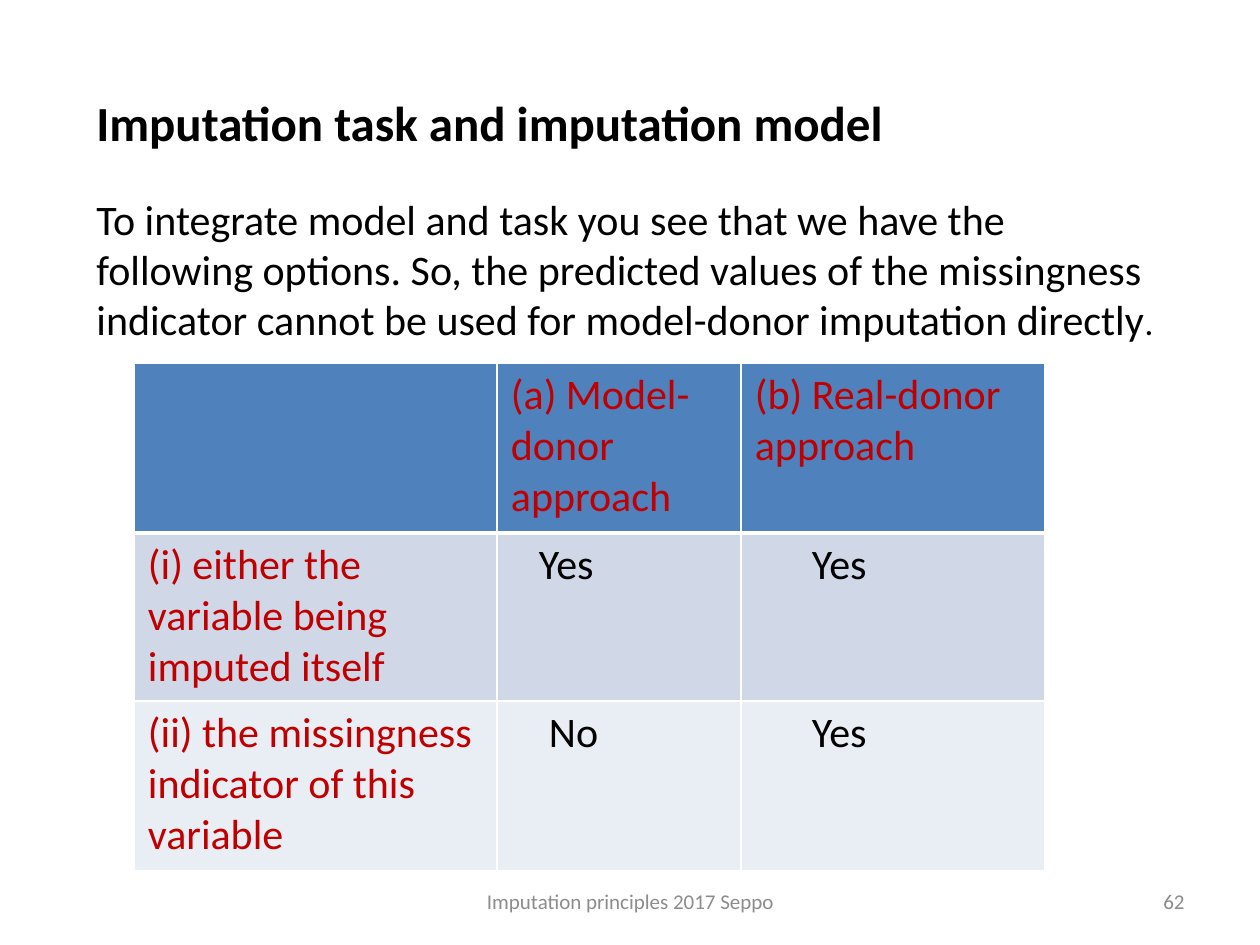
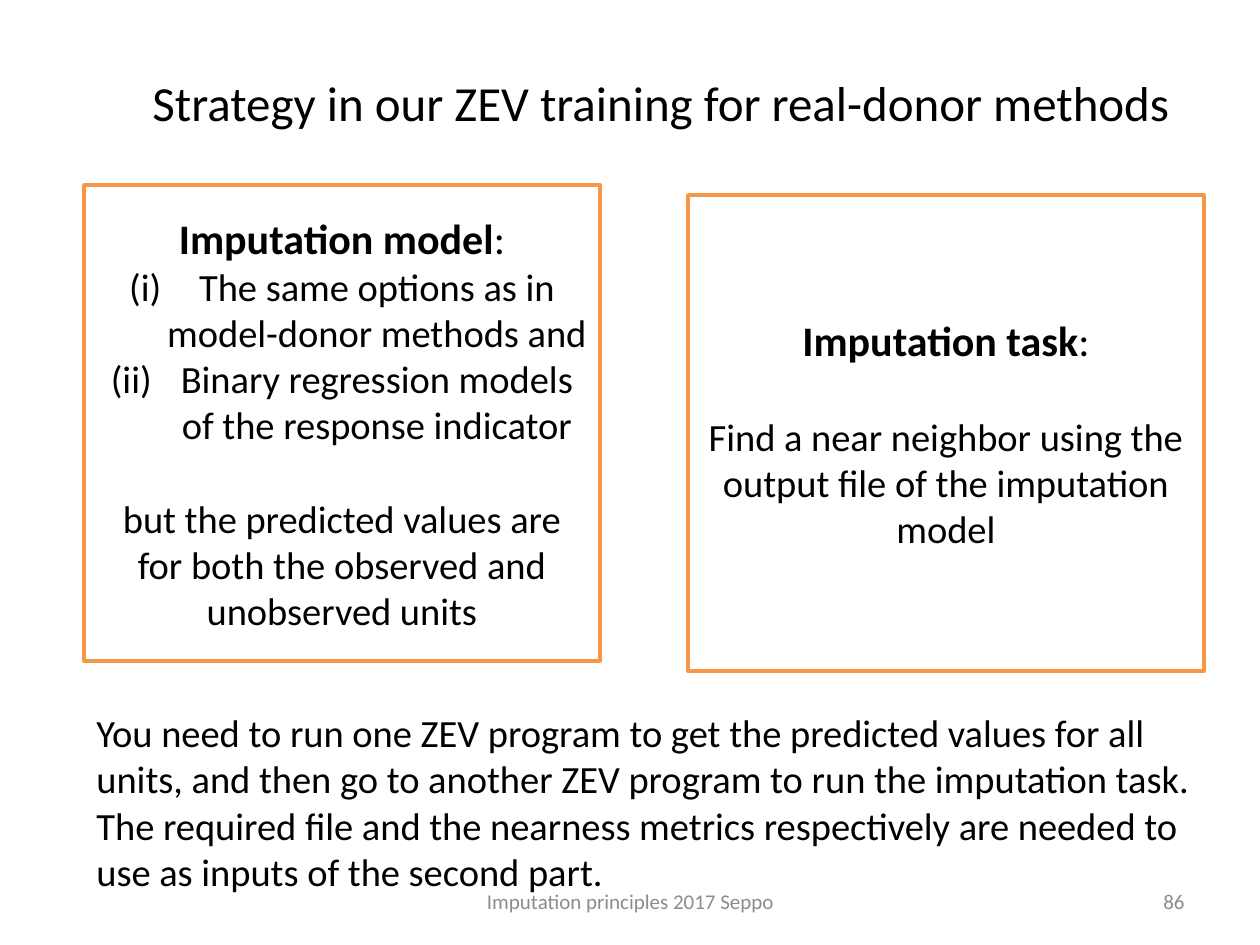
from dataclasses import dataclass
from pptx import Presentation
from pptx.dml.color import RGBColor as Rgb
from pptx.enum.shapes import MSO_SHAPE as Shape
from pptx.enum.text import MSO_ANCHOR as Anchor, PP_ALIGN as Align
from pptx.oxml import parse_xml
from pptx.oxml.ns import nsdecls
from pptx.util import Emu, Pt


@dataclass(frozen=True)
class Theme:
    font: str = "Calibri"
    ink: str = "000000"
    paper: str = "FFFFFF"
    red: str = "C00000"
    grey: str = "8C8C8C"
    frame: str = "F79646"
    bands: tuple = ("4F81BD", "D0D8E8", "E9EDF4")
    title: int = 28
    lead: int = 24
    body: int = 22
    small: int = 20
    foot: int = 12


T = Theme()
SCALE = 914400 / 126
FOOTER = "Imputation principles 2017 Seppo"
INTRO = [
    dict(runs=[("Imputation task and imputation model", T.title, True)], after=24),
    dict(runs=[("To integrate model and task you see that we have the following "
                "options. So, the predicted values of the missingness indicator "
                "cannot be used for model-donor imputation directly", T.lead, False),
               (".", T.small, False)]),
]
GRID = [
    ["", "(a) Model-donor approach", "(b) Real-donor approach"],
    ["(i) either the variable being imputed itself", "Yes", "Yes"],
    ["(ii) the missingness indicator of this variable", "No", "Yes"],
]
COLS = [363, 244, 304]
ROWS = [170, 168, 170]
SHIFT = {(1, 1): 28, (1, 2): 57, (2, 1): 38, (2, 2): 57}
HEAD = [dict(runs=[("Strategy in our ZEV training for real-donor methods", T.title, False)])]
MODEL = [
    dict(runs=[("Imputation model", T.lead, True), (":", T.lead, False)]),
    dict(runs=[("The same options as in model-donor methods and", T.body, False)],
         roman=True),
    dict(runs=[("Binary regression models of the response indicator", T.body, False)],
         roman=True),
    dict(runs=[("but the predicted values are for both the observed and "
                "unobserved units", T.body, False)], before=27),
]
TASK = [
    dict(runs=[("Imputation task", T.lead, True), (":", T.lead, False)]),
    dict(runs=[("Find a near neighbor using the output file of the imputation "
                "model", T.body, False)], before=27),
]
CLOSE = [dict(runs=[("You need to run one ZEV program to get the predicted values for "
                     "all units, and then go to another ZEV program to run the "
                     "imputation task. The required file and the nearness metrics "
                     "respectively are needed to use as inputs of the second part.",
                     T.body, False)])]
PANELS = [(84, 185, MODEL), (688, 195, TASK)]
PANEL = (516, 476)


def px(n):
    return Emu(round(n * SCALE))


def box(*at):
    return [px(n) for n in at]


def style(run, size, bold=False, color=T.ink):
    font = run.font
    font.name, font.size, font.bold = T.font, Pt(size), bold
    font.color.rgb = Rgb.from_string(color)


def number(para):
    ppr = para._p.get_or_add_pPr()
    ppr.set("marL", str(px(70)))
    ppr.set("indent", str(px(-70)))
    ppr.append(parse_xml(f'<a:buAutoNum {nsdecls("a")} type="romanLcParenBoth"/>'))


def write(frame, paras, align=Align.LEFT, color=T.ink, anchor=Anchor.TOP):
    frame.word_wrap = True
    frame.vertical_anchor = anchor
    for i, item in enumerate(paras):
        para = frame.add_paragraph() if i else frame.paragraphs[0]
        para.alignment = align
        para.space_before = Pt(item.get("before", 0))
        para.space_after = Pt(item.get("after", 0))
        if item.get("roman"):
            number(para)
        for text, size, bold in item["runs"]:
            run = para.add_run()
            run.text = text
            style(run, size, bold, color)


def label(slide, at, paras, **look):
    write(slide.shapes.add_textbox(*box(*at)).text_frame, paras, **look)


def footer(slide, page):
    spots = [((431, 876, 399, 50), FOOTER, Align.CENTER),
             ((903, 876, 294, 50), page, Align.RIGHT)]
    for at, text, align in spots:
        label(slide, at, [dict(runs=[(text, T.foot, False)])],
              align=align, color=T.grey, anchor=Anchor.MIDDLE)


def border(cell, row):
    wide = {"L": 1, "R": 1, "T": 3 if row == 1 else 1, "B": 3 if row == 0 else 1}
    tcpr = cell._tc.get_or_add_tcPr()
    for i, (side, width) in enumerate(wide.items()):
        tcpr.insert(i, parse_xml(
            f'<a:ln{side} {nsdecls("a")} w="{Pt(width)}"><a:solidFill>'
            f'<a:srgbClr val="{T.paper}"/></a:solidFill></a:ln{side}>'))


def table(slide):
    at = box(134, 363, sum(COLS), sum(ROWS))
    grid = slide.shapes.add_table(len(ROWS), len(COLS), *at).table
    for col, width in zip(grid.columns, COLS):
        col.width = px(width)
    for r, texts in enumerate(GRID):
        grid.rows[r].height = px(ROWS[r])
        for c, text in enumerate(texts):
            cell = grid.cell(r, c)
            cell.margin_left = px(14 + SHIFT.get((r, c), 0))
            cell.margin_right = px(14)
            cell.fill.solid()
            cell.fill.fore_color.rgb = Rgb.from_string(T.bands[r])
            border(cell, r)
            cell.text_frame.text = text
            for run in cell.text_frame.paragraphs[0].runs:
                style(run, T.lead, color=T.ink if r and c else T.red)


def panel(slide, left, top, paras):
    rect = slide.shapes.add_shape(Shape.RECTANGLE, *box(left, top, *PANEL))
    rect.shadow.inherit = False
    rect.fill.solid()
    rect.fill.fore_color.rgb = Rgb.from_string(T.paper)
    rect.line.color.rgb = Rgb.from_string(T.frame)
    rect.line.width = Pt(2)
    write(rect.text_frame, paras, align=Align.CENTER, anchor=Anchor.MIDDLE)


def options(slide):
    label(slide, (84, 86, 1092, 267), INTRO)
    table(slide)


def plan(slide):
    label(slide, (140, 66, 1065, 72), HEAD)
    for left, top, paras in PANELS:
        panel(slide, left, top, paras)
    label(slide, (84, 703, 1142, 199), CLOSE)


def main():
    deck = Presentation()
    deck.slide_width, deck.slide_height = box(1260, 945)
    for draw, page in [(options, "62"), (plan, "86")]:
        slide = deck.slides.add_slide(deck.slide_layouts[6])
        draw(slide)
        footer(slide, page)
    deck.save("out.pptx")


if __name__ == "__main__":
    main()
